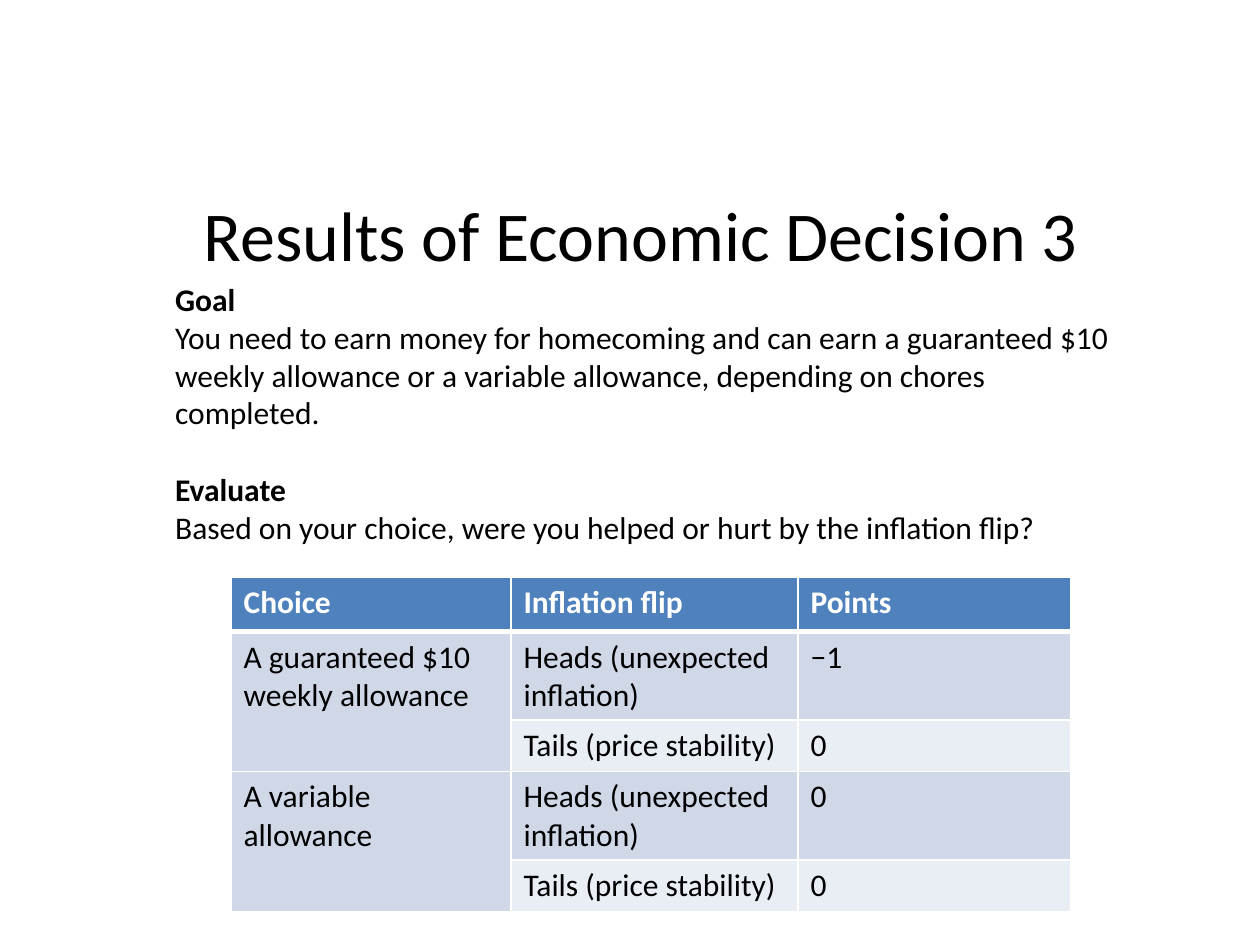
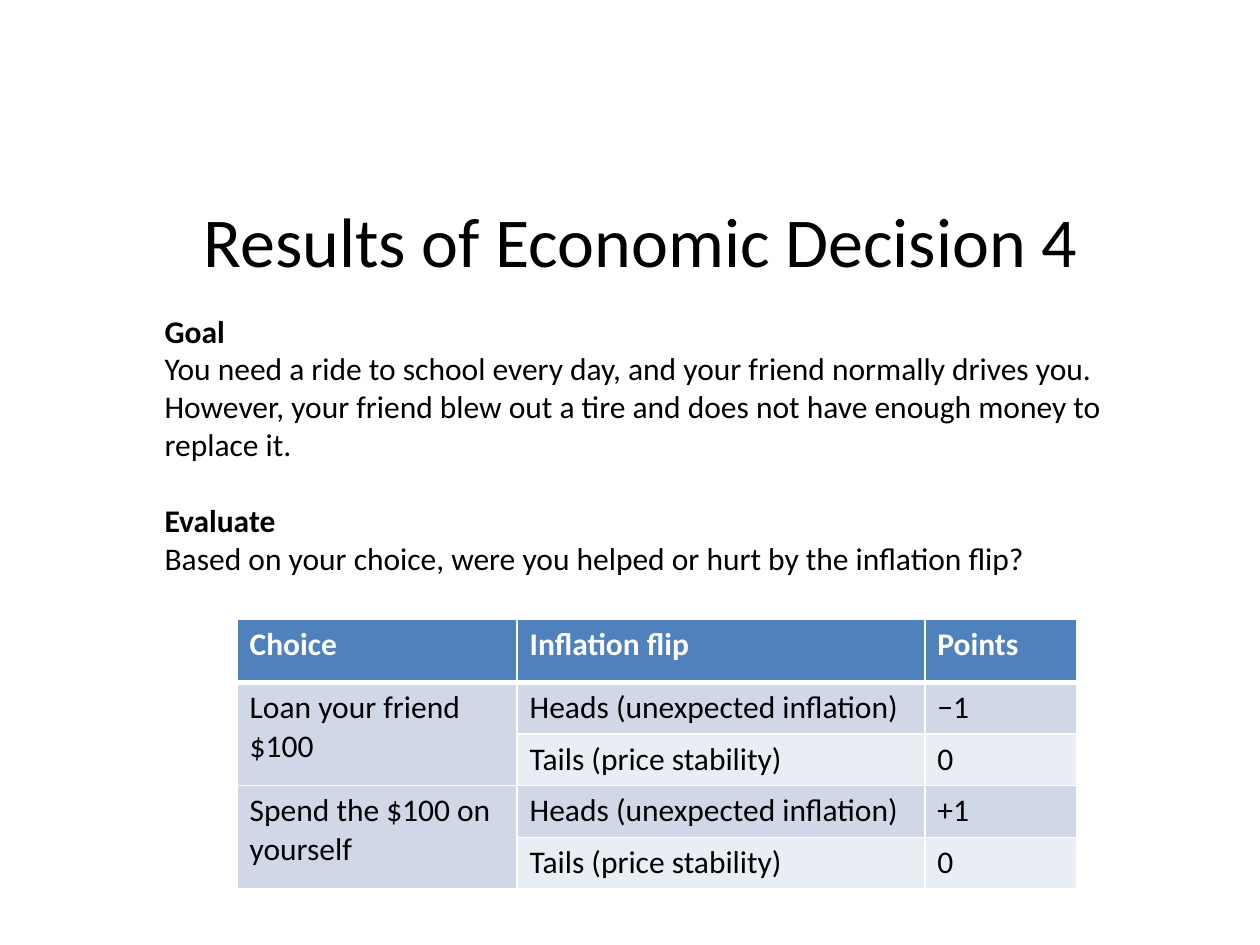
from lxml.etree import SubElement
from pptx import Presentation
from pptx.dml.color import RGBColor
from pptx.enum.text import MSO_ANCHOR as Anchor, MSO_AUTO_SIZE as AutoSize, PP_ALIGN as Align
from pptx.oxml.ns import qn
from pptx.util import Pt

COLORS = {"text": "000000", "white": "FFFFFF", "header": "4F81BD",
          "band_dark": "D0D8E8", "band_light": "E9EDF4"}
FONT = "Calibri"
BODY_SIZE = 18
LINE_GAP = 22
ROW_HEIGHT = 29.5
HEADINGS = ["Choice", "Inflation flip", "Points"]
FLIPS = ["Heads (unexpected inflation)", "Tails (price stability)"]
QUESTION = "Based on your choice, were you helped or hurt by the inflation flip?"

DECISIONS = [
    {
        "title": "Results of Economic Decision 3",
        "title_box": (42, 106, 648, 62.5),
        "goal": "You need to earn money for homecoming and can earn a guaranteed $10 "
                "weekly allowance or a variable allowance, depending on chores completed.",
        "goal_box": (93, 156.5, 558, 160),
        "table_at": (132, 330),
        "col_widths": (160, 164, 156),
        "header_height": 31,
        "choices": [("A guaranteed $10 weekly allowance", ("−1", "0")),
                    ("A variable allowance", ("0", "0"))],
    },
    {
        "title": "Results of Economic Decision 4",
        "title_box": (42, 109.5, 648, 50.5),
        "goal": "You need a ride to school every day, and your friend normally drives you. "
                "However, your friend blew out a tire and does not have enough money to "
                "replace it.",
        "goal_box": (87, 174.5, 558, 160),
        "table_at": (135.5, 354),
        "col_widths": (160, 233, 87),
        "header_height": 36,
        "choices": [("Loan your friend $100", ("−1", "0")),
                    ("Spend the $100 on yourself", ("+1", "0"))],
    },
]


def rgb(name):
    """Return the named colour."""
    return RGBColor.from_string(COLORS[name])


def add_run(p, text, size=BODY_SIZE, bold=False, color="text"):
    """Add one formatted run to a paragraph."""
    r = p.add_run()
    r.text = text
    r.font.name, r.font.size, r.font.bold = FONT, Pt(size), bold
    r.font.color.rgb = rgb(color)


def add_title(s, text, box):
    """Fill the title placeholder and move it to its box."""
    sp = s.shapes.title
    sp.left, sp.top, sp.width, sp.height = map(Pt, box)
    tf = sp.text_frame
    tf.auto_size, tf.vertical_anchor = AutoSize.NONE, Anchor.TOP
    p = tf.paragraphs[0]
    p.alignment = Align.CENTER
    add_run(p, text, size=40)


def add_goal(s, goal, box):
    """Add the goal and the evaluation question under bold headings."""
    tf = s.shapes.add_textbox(*map(Pt, box)).text_frame
    tf.word_wrap = True
    tf.auto_size = AutoSize.SHAPE_TO_FIT_TEXT
    for i, (heading, text) in enumerate([("Goal", goal), ("Evaluate", QUESTION)]):
        p = tf.add_paragraph() if i else tf.paragraphs[0]
        p.space_before = Pt(LINE_GAP * i)
        add_run(p, heading, bold=True)
        add_run(tf.add_paragraph(), text)


def set_borders(cell, top=1, bottom=1):
    """Draw white borders around a cell, with widths in points."""
    tcPr = cell._tc.get_or_add_tcPr()
    for side, width in (("L", 1), ("R", 1), ("T", top), ("B", bottom)):
        ln = SubElement(tcPr, qn(f"a:ln{side}"), w=str(Pt(width)))
        fill = SubElement(ln, qn("a:solidFill"))
        SubElement(fill, qn("a:srgbClr"), val=COLORS["white"])


def format_cell(cell, row, col):
    """Give a cell the borders and band colour of its position."""
    set_borders(cell, top=3 if row == 1 else 1, bottom=3 if row == 0 else 1)
    cell.fill.solid()
    if row == 0:
        band = "header"
    else:
        band = "band_dark" if col == 0 or row % 2 else "band_light"
    cell.fill.fore_color.rgb = rgb(band)


def add_points_table(s, at, col_widths, header_height, choices):
    """Add the table of points for each choice and inflation flip."""
    rows = [HEADINGS]
    for choice, points in choices:
        for i, (flip, point) in enumerate(zip(FLIPS, points)):
            rows.append(["" if i else choice, flip, point])
    heights = [header_height] + [ROW_HEIGHT] * (len(rows) - 1)
    size = sum(col_widths), sum(heights)
    table = s.shapes.add_table(len(rows), len(HEADINGS), *map(Pt, at + size)).table
    for col, width in zip(table.columns, col_widths):
        col.width = Pt(width)
    for i, (texts, height) in enumerate(zip(rows, heights)):
        table.rows[i].height = Pt(height)
        for j, text in enumerate(texts):
            cell = table.cell(i, j)
            format_cell(cell, i, j)
            if text:
                add_run(cell.text_frame.paragraphs[0], text, bold=i == 0,
                        color="text" if i else "white")
    for i in range(1, len(rows), len(FLIPS)):
        table.cell(i, 0).merge(table.cell(i + len(FLIPS) - 1, 0))


def add_decision_slide(prs, decision):
    """Add the results slide of one economic decision."""
    s = prs.slides.add_slide(prs.slide_layouts[5])
    add_goal(s, decision["goal"], decision["goal_box"])
    add_title(s, decision["title"], decision["title_box"])
    add_points_table(s, decision["table_at"], decision["col_widths"],
                     decision["header_height"], decision["choices"])


def main():
    """Build and save the presentation."""
    prs = Presentation()
    prs.slide_width, prs.slide_height = Pt(720), Pt(540)
    for decision in DECISIONS:
        add_decision_slide(prs, decision)
    prs.save("out.pptx")


if __name__ == "__main__":
    main()
